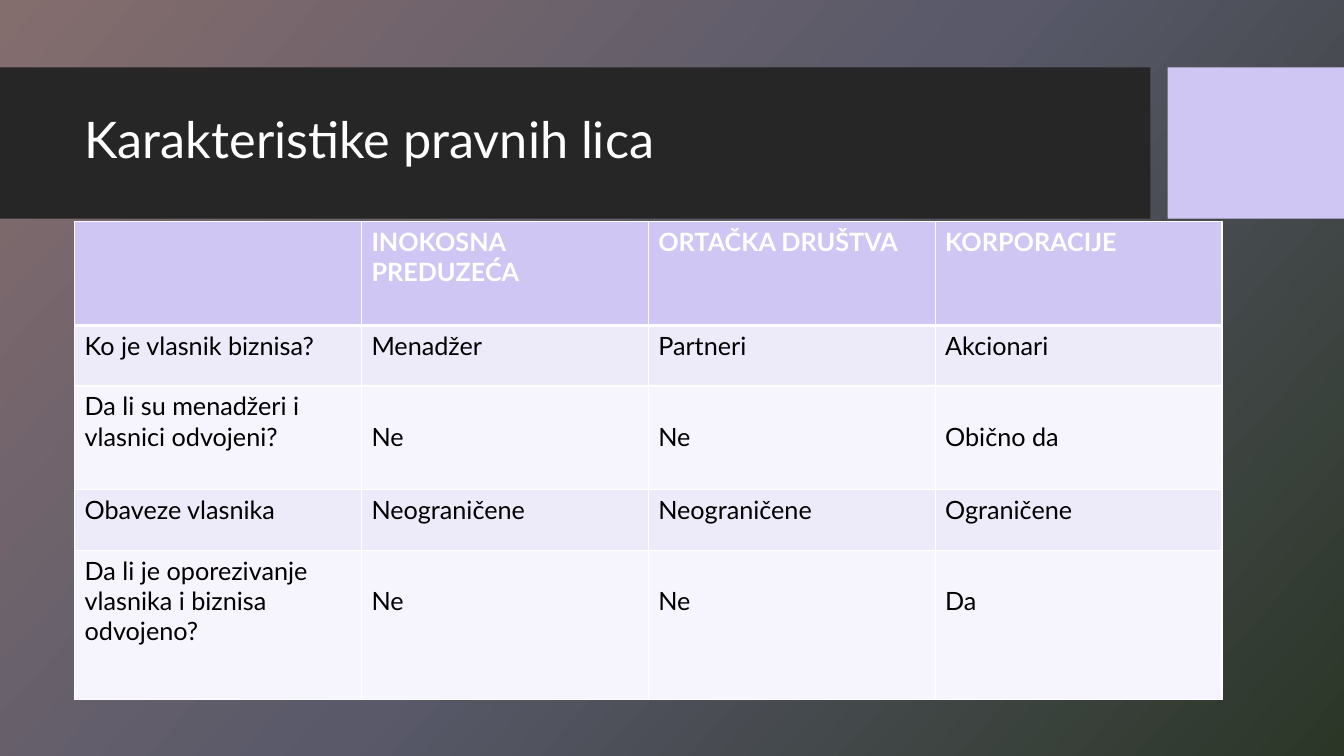
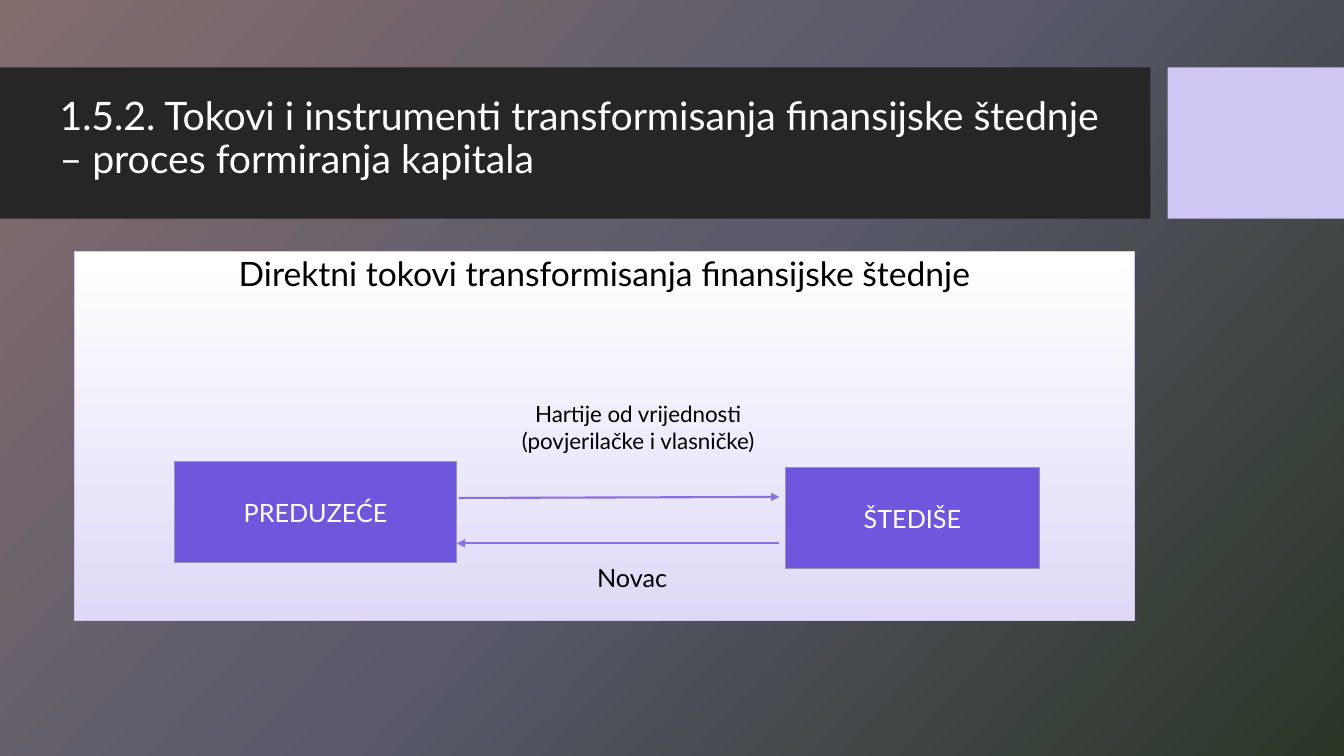
from copy import deepcopy

from lxml.etree import SubElement
from pptx import Presentation
from pptx.dml.color import RGBColor
from pptx.enum.shapes import MSO_CONNECTOR, MSO_SHAPE
from pptx.enum.text import MSO_ANCHOR, MSO_AUTO_SIZE, PP_ALIGN
from pptx.oxml.ns import qn
from pptx.util import Inches, Pt

FONT = "Lato"
WHITE, BLACK, DARK = "FFFFFF", "000000", "262626"
LILAC, VIOLET, ARROW, EDGE = "CFC6F3", "7056DC", "8971E1", "9992B4"
ROW_FILLS = ["F6F5FD", "EDEAFA"]

rgb = RGBColor.from_string
prs = Presentation()
prs.slide_width, prs.slide_height = Inches(13.33), Inches(7.5)


def share(*percents):
    sides = (prs.slide_width, prs.slide_height)
    return [int(sides[i % 2] * n / 100) for i, n in enumerate(percents)]


def gradient(fill, element, angle, colors):
    fill.gradient()
    fill.gradient_angle = 360 - angle
    stops = element.find(".//" + qn("a:gsLst"))
    while len(stops) < len(colors):
        stops.append(deepcopy(stops[0]))
    for i, (stop, color) in enumerate(zip(fill.gradient_stops, colors)):
        stop.position = i / (len(colors) - 1)
        stop.color.rgb = rgb(color)


master = prs.slide_master
gradient(master.background.fill, master.element, 42, ["846D6D", "59596A", "2B3627"])
s1 = prs.slides.add_slide(prs.slide_layouts[5])
s2 = prs.slides.add_slide(prs.slide_layouts[1])

for i, (left, width, color) in enumerate([(0, 85.6, DARK), (86.87, 13.13, LILAC)]):
    band = s1.shapes.add_shape(MSO_SHAPE.RECTANGLE, *share(left, 8.93, width, 20))
    band.shadow.inherit = False
    band.fill.solid()
    band.fill.fore_color.rgb = rgb(color)
    band.line.fill.background()
    master.shapes.element.insert(2 + i, band.element)

texts = []
titles = [
    (s1, "Karakteristike pravnih lica", 36, (5.55, 10.93, 78.84, 15.73)),
    (s2, "1.5.2. Tokovi i instrumenti transformisanja finansijske štednje – proces formiranja kapitala",
     28, (3.68, 9.87, 80.8, 17.07)),
]
for s, text, size, box in titles:
    sp = s.shapes.title
    sp.left, sp.top, sp.width, sp.height = share(*box)
    texts.append((sp, text, size, WHITE, PP_ALIGN.LEFT, MSO_ANCHOR.MIDDLE, 0.9))

rows = [
    ["", "INOKOSNA PREDUZEĆA", "ORTAČKA DRUŠTVA", "KORPORACIJE"],
    ["Ko je vlasnik biznisa?", "Menadžer", "Partneri", "Akcionari"],
    ["Da li su menadžeri i vlasnici odvojeni?", "Ne", "Ne", "Obično da"],
    ["Obaveze vlasnika", "Neograničene", "Neograničene", "Ograničene"],
    ["Da li je oporezivanje vlasnika i biznisa odvojeno?", "Ne", "Ne", "Da"],
]
heights = [13.73, 8, 13.73, 8, 19.73]
table = s1.shapes.add_table(
    len(rows), len(rows[0]), *share(5.55, 29.33, 85.37, sum(heights))).table
for r, (row, height) in enumerate(zip(rows, heights)):
    table.rows[r].height = share(0, height)[1]
    for c, text in enumerate(row):
        cell = table.cell(r, c)
        tc_pr = cell._tc.get_or_add_tcPr()
        for side in "LRTB":
            thick = (r, side) in [(0, "B"), (1, "T")]
            ln = SubElement(tc_pr, qn("a:ln" + side), w=str(Pt(3 if thick else 1)))
            SubElement(SubElement(ln, qn("a:solidFill")), qn("a:srgbClr"), val=WHITE)
        cell.fill.solid()
        cell.fill.fore_color.rgb = rgb(ROW_FILLS[r % 2] if r else LILAC)
        if r in (2, 4) and c:
            cell.margin_top = Inches(0.35)
        cell.text = text
        p = cell.text_frame.paragraphs[0]
        p.font.name, p.font.size, p.font.bold = FONT, Pt(18), r == 0
        p.font.color.rgb = rgb(BLACK if r else WHITE)

panel = s2.placeholders[1]
panel.left, panel.top, panel.width, panel.height = share(5.55, 33.33, 78.84, 48.8)
gradient(panel.fill, panel.element, 90, [WHITE, "DFD9F7"])
panel.line.color.rgb = rgb(LILAC)
panel.line.width = Pt(0.75)
texts.append((panel, "Direktni tokovi transformisanja finansijske štednje", 24, BLACK,
              PP_ALIGN.CENTER, MSO_ANCHOR.TOP, 0.9))

nodes = [
    ("PREDUZEĆE", 18, True, (12.98, 61.07, 21.01, 13.33)),
    ("ŠTEDIŠE", 18, True, (58.44, 61.87, 18.9, 13.33)),
    ("Hartije od vrijednosti (povjerilačke i vlasničke)", 16, False, (32.56, 51.07, 29.86, 10.8)),
    ("Novac", 18, False, (38.56, 72.67, 16.95, 7.47)),
]
for text, size, filled, box in nodes:
    sp = s2.shapes.add_shape(MSO_SHAPE.RECTANGLE if filled else MSO_SHAPE.OVAL, *share(*box))
    sp.shadow.inherit = False
    if filled:
        sp.fill.solid()
        sp.fill.fore_color.rgb = rgb(VIOLET)
        sp.line.color.rgb = rgb(EDGE)
        sp.line.width = Pt(1)
    else:
        sp.fill.background()
        sp.line.fill.background()
    texts.append((sp, text, size, WHITE if filled else BLACK,
                  PP_ALIGN.CENTER, MSO_ANCHOR.MIDDLE, 1.0))

for ends in [(34.13, 65.87, 57.99, 65.73), (57.99, 71.87, 33.98, 71.87)]:
    arrow = s2.shapes.add_connector(MSO_CONNECTOR.STRAIGHT, *share(*ends))
    arrow.line.color.rgb = rgb(ARROW)
    arrow.line.width = Pt(1.5)
    SubElement(arrow.line._get_or_add_ln(), qn("a:tailEnd"), type="triangle")
    SubElement(arrow.element.spPr, qn("a:effectLst"))

for sp, text, size, color, align, anchor, spacing in texts:
    tf = sp.text_frame
    tf.text = text
    tf.word_wrap = True
    tf.auto_size = MSO_AUTO_SIZE.NONE
    tf.vertical_anchor = anchor
    p = tf.paragraphs[0]
    p.alignment, p.line_spacing, p.space_before = align, spacing, Pt(0)
    if sp is panel:
        p_pr = p._p.get_or_add_pPr()
        p_pr.set("marL", "0")
        p_pr.set("indent", "0")
        SubElement(p_pr, qn("a:buNone"))
    p.font.name, p.font.size = FONT, Pt(size)
    p.font.color.rgb = rgb(color)

prs.save("out.pptx")
